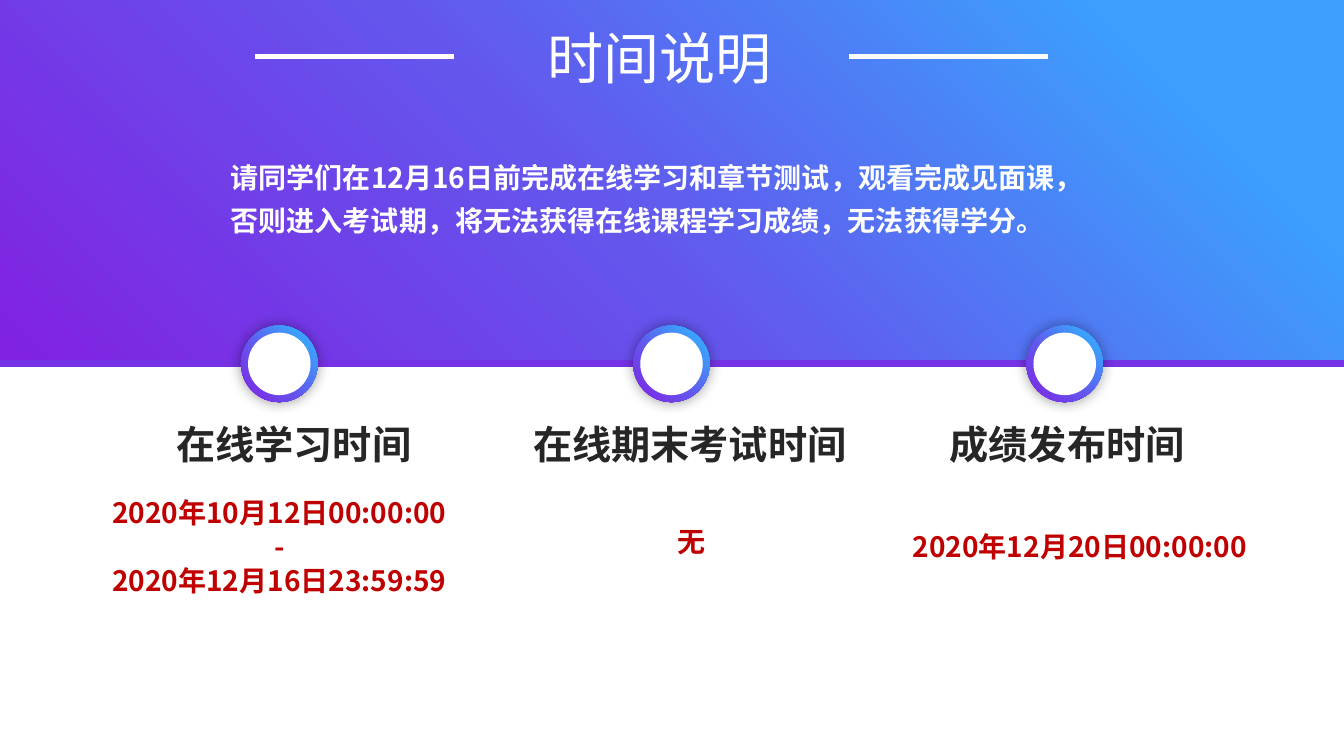
from lxml import etree
from pptx import Presentation
from pptx.dml.color import RGBColor
from pptx.enum.shapes import MSO_CONNECTOR, MSO_SHAPE
from pptx.enum.text import MSO_AUTO_SIZE, PP_ALIGN
from pptx.oxml import parse_xml
from pptx.oxml.ns import nsdecls, qn
from pptx.util import Inches, Pt

STRAIGHT = MSO_CONNECTOR.STRAIGHT
RECTANGLE = MSO_SHAPE.RECTANGLE
OVAL = MSO_SHAPE.OVAL
FIT_SHAPE = MSO_AUTO_SIZE.SHAPE_TO_FIT_TEXT
LEFT = PP_ALIGN.LEFT
CENTER = PP_ALIGN.CENTER

WHITE = RGBColor(0xFF, 0xFF, 0xFF)
DARK = RGBColor(0x26, 0x26, 0x26)
RED = RGBColor(0xC0, 0x00, 0x00)
PURPLE = RGBColor(0x76, 0x33, 0xE6)
GRADIENT_STOPS = (
    (1, RGBColor(0x80, 0x22, 0xE2)),
    (42, RGBColor(0x64, 0x55, 0xED)),
    (82, RGBColor(0x3C, 0x9F, 0xFD)),
)
FONT = "Noto Sans CJK SC"

SLIDE_WIDTH, SLIDE_HEIGHT = 13.33, 7.5
AXIS_Y = 3.61
RING_SIZE, DISC_SIZE = 0.76, 0.62

# Ring centre, heading, heading box (left, width), date lines, date box (left, top, height)
MILESTONES = (
    (2.77, "在线学习时间", (1.65, 2.58),
     ("2020年10月12日00:00:00", "-", "2020年12月16日23:59:59"), (0.84, 4.87, 1.11)),
    (6.66, "在线期末考试时间", (5.19, 3.38), ("无",), (4.93, 5.15, 0.44)),
    (10.56, "成绩发布时间", (9.32, 3.54),
     ("2020年12月20日00:00:00",), (8.78, 5.2, 0.44)),
)


def fill_gradient(shape):
    """Blend purple at the bottom left into blue at the top right."""
    shape.fill.gradient()
    shape.fill.gradient_angle = 45
    stop_list = shape.fill._xPr.find(qn("a:gradFill")).find(qn("a:gsLst"))
    for stop in list(stop_list):
        stop_list.remove(stop)
    for percent, color in GRADIENT_STOPS:
        stop = etree.SubElement(stop_list, qn("a:gs"), pos=str(percent * 1000))
        etree.SubElement(stop, qn("a:srgbClr"), val=str(color))


def add_plain_shape(shapes, kind, left, top, width, height):
    shape = shapes.add_shape(
        kind, Inches(left), Inches(top), Inches(width), Inches(height))
    shape.shadow.inherit = False
    shape.line.fill.background()
    return shape


def add_glow_shadow(shape):
    """Put a soft shadow evenly around the shape."""
    effects = shape._element.spPr.find(qn("a:effectLst"))
    effects.append(parse_xml(
        f'<a:outerShdw {nsdecls("a")} blurRad="{Pt(10)}" dist="0" algn="ctr" '
        'rotWithShape="0"><a:srgbClr val="000000"><a:alpha val="40000"/>'
        '</a:srgbClr></a:outerShdw>'))


def add_horizontal_line(slide, left, y, width, color, weight):
    line = slide.shapes.add_connector(
        STRAIGHT, Inches(left), Inches(y), Inches(left + width), Inches(y))
    line.line.color.rgb = color
    line.line.width = Pt(weight)
    etree.SubElement(line._element.spPr, qn("a:effectLst"))


def add_text(slide, box, lines, size, color, bold=True, alignment=LEFT, spacing=None):
    text_box = slide.shapes.add_textbox(*(Inches(length) for length in box))
    frame = text_box.text_frame
    frame.word_wrap = True
    frame.auto_size = FIT_SHAPE
    frame.text = "\n".join(lines)
    for paragraph in frame.paragraphs:
        paragraph.alignment = alignment
        paragraph.line_spacing = spacing
        font = paragraph.font
        font.size = Pt(size)
        font.bold = bold
        font.color.rgb = color
        font.name = FONT
        etree.SubElement(font._element, qn("a:ea"), typeface=FONT)


def add_banner(slide, left, top, width, height):
    banner = add_plain_shape(slide.shapes, RECTANGLE, left, top, width, height)
    fill_gradient(banner)
    add_horizontal_line(slide, left, top + height, width, PURPLE, 5)


def add_title(slide, left, top, width):
    """Set the title between two rules that end at the sides of the box."""
    rule_width, rule_y = 1.97, top + 0.38
    add_text(slide, (left + 2.8, top, 2.67, 0.77), ["时间说明"], 40, WHITE, bold=False)
    for rule_left in (left, left + width - rule_width):
        add_horizontal_line(slide, rule_left, rule_y, rule_width, WHITE, 3)


def add_notice(slide, left, top, width, height):
    notice = ("请同学们在12月16日前完成在线学习和章节测试，观看完成见面课，"
              "否则进入考试期，将无法获得在线课程学习成绩，无法获得学分。")
    add_text(slide, (left, top, width, height), [notice], 20, WHITE, spacing=1.3)


def add_marker(slide, center_x, center_y):
    """Draw a gradient ring as a white disc on a larger circle."""
    group = slide.shapes.add_group_shape()
    ring, disc = (
        add_plain_shape(group.shapes, OVAL, center_x - size / 2,
                        center_y - size / 2, size, size)
        for size in (RING_SIZE, DISC_SIZE))
    fill_gradient(ring)
    add_glow_shadow(ring)
    disc.fill.solid()
    disc.fill.fore_color.rgb = WHITE


def add_milestone(slide, center_x, heading, heading_span, dates, date_box):
    add_marker(slide, center_x, AXIS_Y)
    heading_left, heading_width = heading_span
    add_text(slide, (heading_left, AXIS_Y + 0.51, heading_width, 0.57),
             [heading], 28, DARK)
    date_left, date_top, date_height = date_box
    add_text(slide, (date_left, date_top, 3.86, date_height),
             dates, 20, RED, alignment=CENTER)


def main():
    presentation = Presentation()
    presentation.slide_width = Inches(SLIDE_WIDTH)
    presentation.slide_height = Inches(SLIDE_HEIGHT)
    slide = presentation.slides.add_slide(presentation.slide_layouts[6])
    add_banner(slide, 0, -0.73, SLIDE_WIDTH, AXIS_Y + 0.73)
    for milestone in MILESTONES:
        add_milestone(slide, *milestone)
    add_title(slide, 2.53, 0.18, 7.86)
    add_notice(slide, 2.19, 1.44, 8.68, 0.97)
    presentation.save("out.pptx")


if __name__ == "__main__":
    main()
